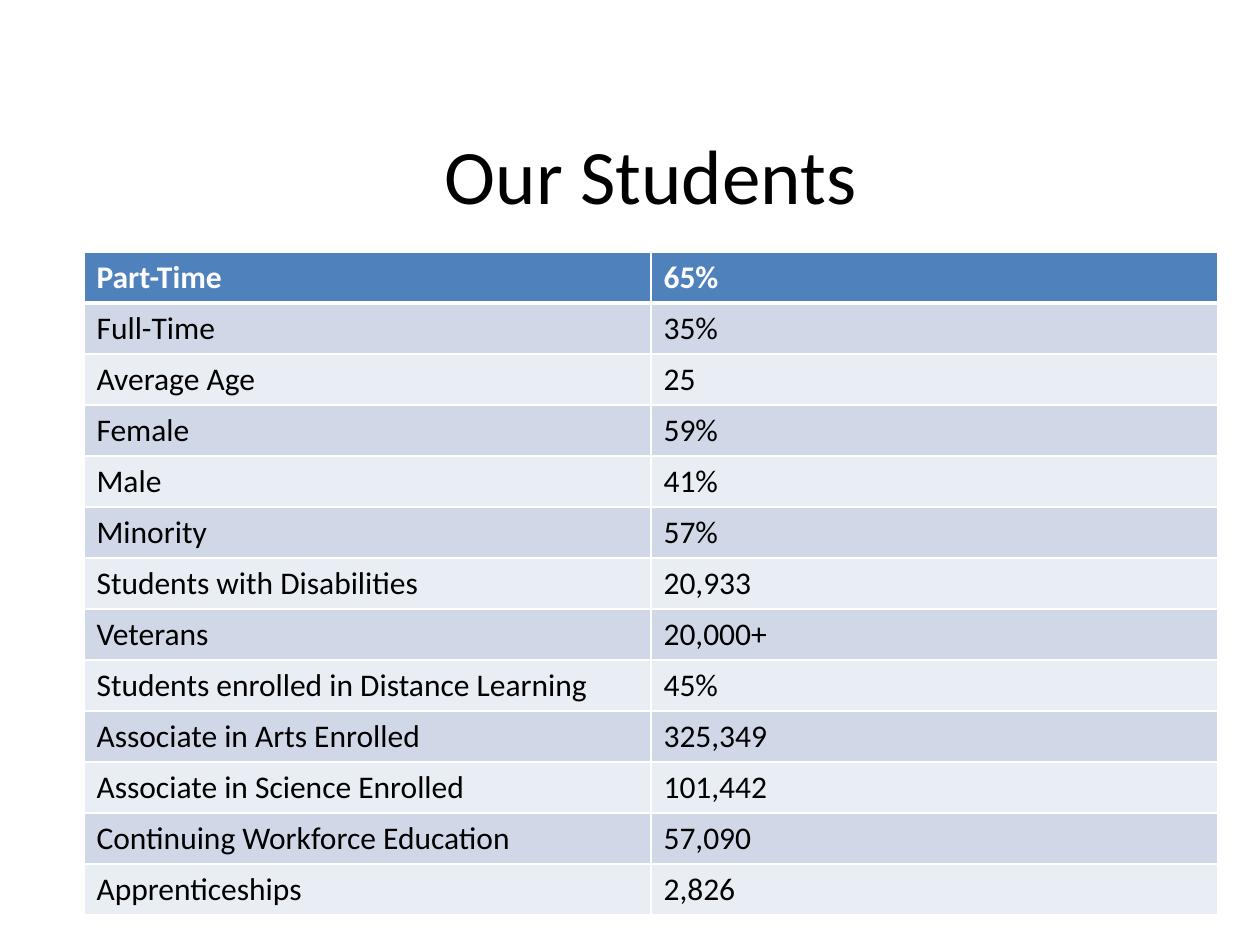
from typing import NamedTuple

from lxml import etree
from pptx import Presentation
from pptx.dml.color import RGBColor
from pptx.enum.text import MSO_ANCHOR, PP_ALIGN
from pptx.oxml.ns import qn
from pptx.util import Emu, Pt

MIDDLE = MSO_ANCHOR.MIDDLE
CENTER = PP_ALIGN.CENTER

PX_PER_INCH = 126
FONT = "Calibri"
BLACK, WHITE = "000000", "FFFFFF"
HEADER_FILL = "4F81BD"
BAND_FILLS = ("D0D8E8", "E9EDF4")

LEFT, WIDTH = 84, 1134
TITLE_TOP, TITLE_HEIGHT = 95, 157
TABLE_TOP, ROW_HEIGHT = 252, 51


class Statistic(NamedTuple):
    label: str
    value: str


STATISTICS = [
    Statistic("Part-Time", "65%"),
    Statistic("Full-Time", "35%"),
    Statistic("Average Age", "25"),
    Statistic("Female", "59%"),
    Statistic("Male", "41%"),
    Statistic("Minority", "57%"),
    Statistic("Students with Disabilities", "20,933"),
    Statistic("Veterans", "20,000+"),
    Statistic("Students enrolled in Distance Learning", "45%"),
    Statistic("Associate in Arts Enrolled", "325,349"),
    Statistic("Associate in Science Enrolled", "101,442"),
    Statistic("Continuing Workforce Education", "57,090"),
    Statistic("Apprenticeships", "2,826"),
]


def px(n: int) -> Emu:
    return Emu(round(n * 914400 / PX_PER_INCH))


def rgb(color: str) -> RGBColor:
    return RGBColor.from_string(color)


def add_run(p, text: str, size: int, color: str, bold: bool = False) -> None:
    r = p.add_run()
    r.text = text
    r.font.name = FONT
    r.font.size = Pt(size)
    r.font.bold = bold
    r.font.color.rgb = rgb(color)


def set_borders(cell, bottom: int) -> None:
    """Draw white cell edges, 1 pt wide except for the bottom one."""
    tc_pr = cell._tc.get_or_add_tcPr()
    for side, width in (("L", 1), ("R", 1), ("T", 1), ("B", bottom)):
        ln = etree.SubElement(tc_pr, qn(f"a:ln{side}"), w=str(Pt(width)))
        fill = etree.SubElement(ln, qn("a:solidFill"))
        etree.SubElement(fill, qn("a:srgbClr"), val=WHITE)


def add_title(slide, text: str) -> None:
    box = slide.shapes.add_textbox(px(LEFT), px(TITLE_TOP), px(WIDTH), px(TITLE_HEIGHT))
    tf = box.text_frame
    tf.word_wrap = True
    tf.vertical_anchor = MIDDLE
    p = tf.paragraphs[0]
    p.alignment = CENTER
    add_run(p, text, 44, BLACK)


def add_statistics_table(slide, statistics: list[Statistic]) -> None:
    rows, cols = len(statistics), len(Statistic._fields)
    table = slide.shapes.add_table(
        rows, cols, px(LEFT), px(TABLE_TOP), px(WIDTH), px(rows * ROW_HEIGHT)
    ).table
    for i, statistic in enumerate(statistics):
        table.rows[i].height = px(ROW_HEIGHT)
        header = i == 0
        for j, text in enumerate(statistic):
            cell = table.cell(i, j)
            set_borders(cell, bottom=3 if header else 1)
            cell.fill.solid()
            cell.fill.fore_color.rgb = rgb(HEADER_FILL if header else BAND_FILLS[(i - 1) % 2])
            add_run(cell.text_frame.paragraphs[0], text, 18, WHITE if header else BLACK, header)


def main() -> None:
    prs = Presentation()
    prs.slide_width, prs.slide_height = px(1260), px(945)
    slide = prs.slides.add_slide(prs.slide_layouts[6])
    add_title(slide, "Our Students")
    add_statistics_table(slide, STATISTICS)
    prs.save("out.pptx")


if __name__ == "__main__":
    main()
